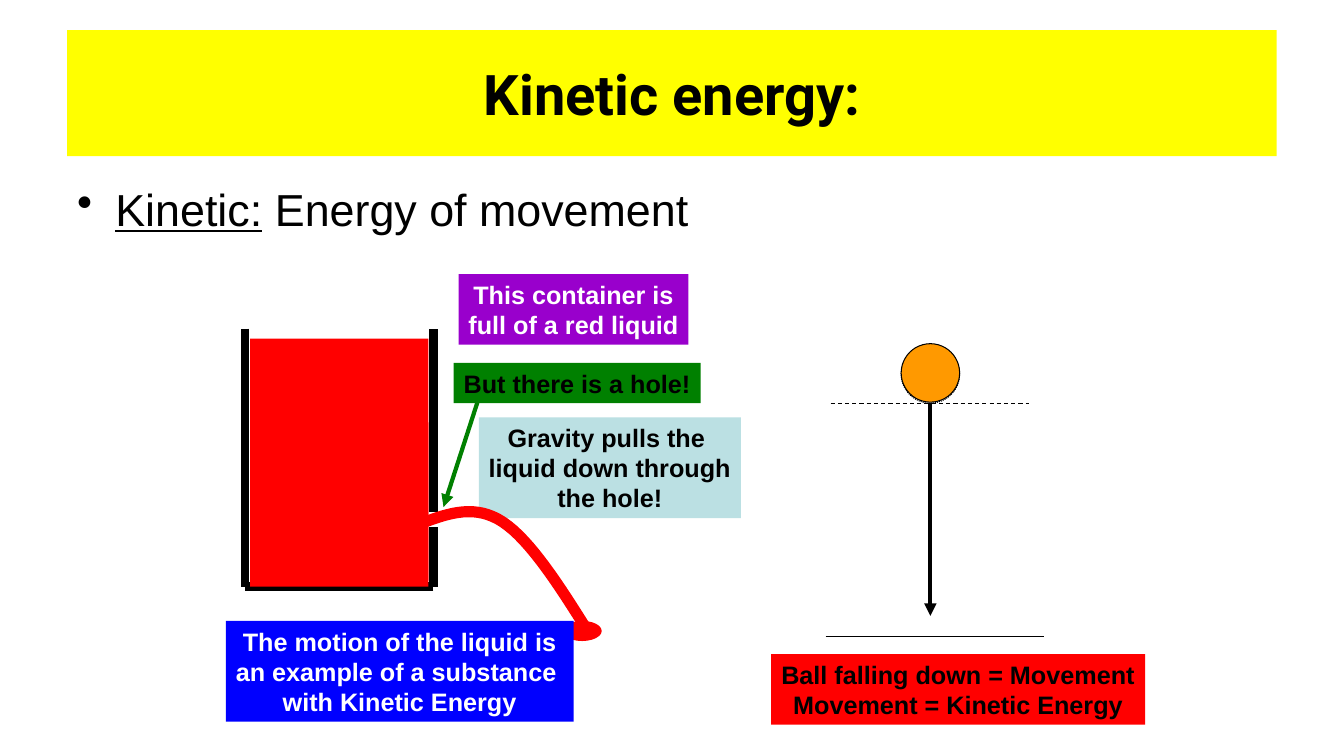
from lxml.etree import SubElement
from pptx import Presentation
from pptx.dml.color import RGBColor
from pptx.enum.dml import MSO_LINE
from pptx.enum.shapes import MSO_CONNECTOR, MSO_SHAPE
from pptx.enum.text import MSO_ANCHOR, PP_ALIGN
from pptx.oxml.ns import qn
from pptx.util import Inches, Pt

SLIDE_WIDTH, SLIDE_HEIGHT = Inches(13.33), Inches(7.5)
COLUMN, ROW = SLIDE_WIDTH / 80, SLIDE_HEIGHT / 45

BLACK = RGBColor(0x00, 0x00, 0x00)
WHITE = RGBColor(0xFF, 0xFF, 0xFF)
YELLOW = RGBColor(0xFF, 0xFF, 0x00)
RED = RGBColor(0xFF, 0x00, 0x00)
ORANGE = RGBColor(0xFF, 0x99, 0x00)
PALE_BLUE = RGBColor(0xBB, 0xE0, 0xE3)
PURPLE = RGBColor(0x99, 0x00, 0xCC)
GREEN = RGBColor(0x00, 0x80, 0x00)
BLUE = RGBColor(0x00, 0x00, 0xFF)

LIQUID_LEFT, LIQUID_WIDTH = 14.88, 10.62
LEFT_WALL, RIGHT_WALL = 14.58, 25.8
WALL_TOP, WALL_BOTTOM = 19.56, 34.92
HOLE_TOP, HOLE_BOTTOM = 30.48, 31.38
BALL_LEFT, BALL_TOP, BALL_SIZE = 53.64, 20.46, 3.48
BALL_CENTRE, DROP_START = 55.38, 24


def place(columns, rows):
    return round(columns * COLUMN), round(rows * ROW)


def add_figure(slide, preset, box, fill=None, outline=None, dash=None):
    """Draw a preset shape; box is left, top, width, height in grid units."""
    figure = slide.shapes.add_shape(preset, *place(*box[:2]), *place(*box[2:]))
    figure.shadow.inherit = False
    if fill is None:
        figure.fill.background()
    else:
        figure.fill.solid()
        figure.fill.fore_color.rgb = fill
    if outline is None:
        figure.line.fill.background()
    else:
        figure.line.color.rgb = outline
        figure.line.width = Pt(0.75)
        figure.line.dash_style = dash
    return figure


def add_label(slide, box, lines, fill, color=BLACK, size=18, font="Arial",
              anchor=MSO_ANCHOR.TOP):
    label = add_figure(slide, MSO_SHAPE.RECTANGLE, box, fill)
    frame = label.text_frame
    frame.word_wrap = False
    frame.vertical_anchor = anchor
    frame.text = "\n".join(lines)
    for paragraph in frame.paragraphs:
        paragraph.alignment = PP_ALIGN.CENTER
        paragraph.font.name = font
        paragraph.font.size = Pt(size)
        paragraph.font.bold = True
        paragraph.font.color.rgb = color


def add_bullet(slide, box, term, meaning):
    """Write a bulleted definition with its term underlined."""
    definition = slide.shapes.add_textbox(*place(*box[:2]), *place(*box[2:]))
    definition.text_frame.word_wrap = True
    paragraph = definition.text_frame.paragraphs[0]
    paragraph.font.name = "Arial"
    paragraph.font.size = Pt(32)
    paragraph.font.color.rgb = BLACK
    term_run = paragraph.add_run()
    term_run.text = term
    term_run.font.underline = True
    paragraph.add_run().text = meaning

    properties = paragraph.font._element.getparent()
    properties.set("marL", str(Inches(0.38)))
    properties.set("indent", str(Inches(-0.38)))
    spacing = properties.makeelement(qn("a:spcBef"), {})
    SubElement(spacing, qn("a:spcPct"), val="20000")
    bullet = properties.makeelement(qn("a:buChar"), {"char": "•"})
    properties.insert(0, spacing)
    properties.insert(1, bullet)


def add_line(slide, start, end, width, color=BLACK, dash=None, arrow=False):
    line = slide.shapes.add_connector(
        MSO_CONNECTOR.STRAIGHT, *place(*start), *place(*end))
    line.line.color.rgb = color
    line.line.width = Pt(width)
    line.line.dash_style = dash
    if arrow:
        SubElement(line.line._get_or_add_ln(), qn("a:tailEnd"), type="triangle")
    SubElement(line._element.spPr, qn("a:effectLst"))


def bezier(controls, steps=16):
    """Return the points of a cubic curve after its first one."""
    points = []
    for step in range(1, steps + 1):
        t = step / steps
        weights = ((1 - t) ** 3, 3 * t * (1 - t) ** 2, 3 * t ** 2 * (1 - t), t ** 3)
        points.append(tuple(sum(w * value for w, value in zip(weights, axis))
                            for axis in zip(*controls)))
    return points


def add_stream(slide):
    start, crest, end = (25.26, 31.08), (29.94, 31.08), (34.98, 37.56)
    points = (bezier((start, (26.76, 30.54), (28.32, 30), crest))
              + bezier((crest, (31.56, 32.16), (33.3, 34.86), end)))
    builder = slide.shapes.build_freeform(*place(*start))
    builder.add_line_segments([place(*point) for point in points], close=False)
    stream = builder.convert_to_shape()
    stream.shadow.inherit = False
    stream.fill.background()
    stream.line.color.rgb = RED
    stream.line.width = Pt(8)


def add_falling_ball(slide):
    for top, fill, dash in ((BALL_TOP + 0.06, None, MSO_LINE.ROUND_DOT),
                            (BALL_TOP, ORANGE, None)):
        add_figure(slide, MSO_SHAPE.OVAL, (BALL_LEFT, top, BALL_SIZE, BALL_SIZE),
                   fill, BLACK, dash)
    add_line(slide, (BALL_CENTRE, DROP_START), (BALL_CENTRE, 36.66), 3, arrow=True)
    add_line(slide, (49.44, DROP_START), (61.26, DROP_START), 0.75,
             dash=MSO_LINE.DASH)
    add_line(slide, (49.14, 37.86), (62.16, 37.86), 0.75)
    add_label(slide, (45.9, 38.94, 22.26, 4.2),
              ("Ball falling down = Movement", "Movement = Kinetic Energy"), RED)


def add_leaking_container(slide):
    add_label(slide, (28.5, 24.84, 15.6, 6),
              ("Gravity pulls the ", "liquid down through", "the hole!"), PALE_BLUE)
    for start, end in (
            ((LEFT_WALL, WALL_TOP), (LEFT_WALL, WALL_BOTTOM)),
            ((RIGHT_WALL, WALL_BOTTOM), (LEFT_WALL, WALL_BOTTOM)),
            ((RIGHT_WALL, HOLE_BOTTOM), (RIGHT_WALL, WALL_BOTTOM)),
            ((RIGHT_WALL, HOLE_TOP), (RIGHT_WALL, WALL_TOP))):
        add_line(slide, start, end, 6)
    add_figure(slide, MSO_SHAPE.RECTANGLE,
               (LIQUID_LEFT, 20.16, LIQUID_WIDTH, 14.76), RED)
    add_stream(slide)
    add_figure(slide, MSO_SHAPE.OVAL, (33.48, 36.96, 2.34, 1.2), RED)
    add_label(slide, (27.3, 16.32, 13.68, 4.2),
              ("This container is", "full of a red liquid"), PURPLE, WHITE)
    add_label(slide, (27, 21.6, 14.7, 2.4), ("But there is a hole!",), GREEN)
    add_line(slide, (28.5, 23.7), (26.4, 30.18), 3, GREEN, arrow=True)
    add_label(slide, (13.44, 36.96, 20.7, 6),
              ("The motion of the liquid is", "an example of a substance ",
               "with Kinetic Energy"), BLUE, WHITE)
    add_figure(slide, MSO_SHAPE.RECTANGLE,
               (LIQUID_LEFT, 25.14, LIQUID_WIDTH, 9.42), RED)


def main():
    presentation = Presentation()
    presentation.slide_width = SLIDE_WIDTH
    presentation.slide_height = SLIDE_HEIGHT
    slide = presentation.slides.add_slide(presentation.slide_layouts[6])
    add_label(slide, (4, 1.8, 72, 7.5), ("Kinetic energy:",), YELLOW,
              size=40, font="Roboto", anchor=MSO_ANCHOR.MIDDLE)
    add_bullet(slide, (4, 10.5, 72, 29.7), "Kinetic:", " Energy of movement")
    add_falling_ball(slide)
    add_leaking_container(slide)
    presentation.save("out.pptx")


if __name__ == "__main__":
    main()
